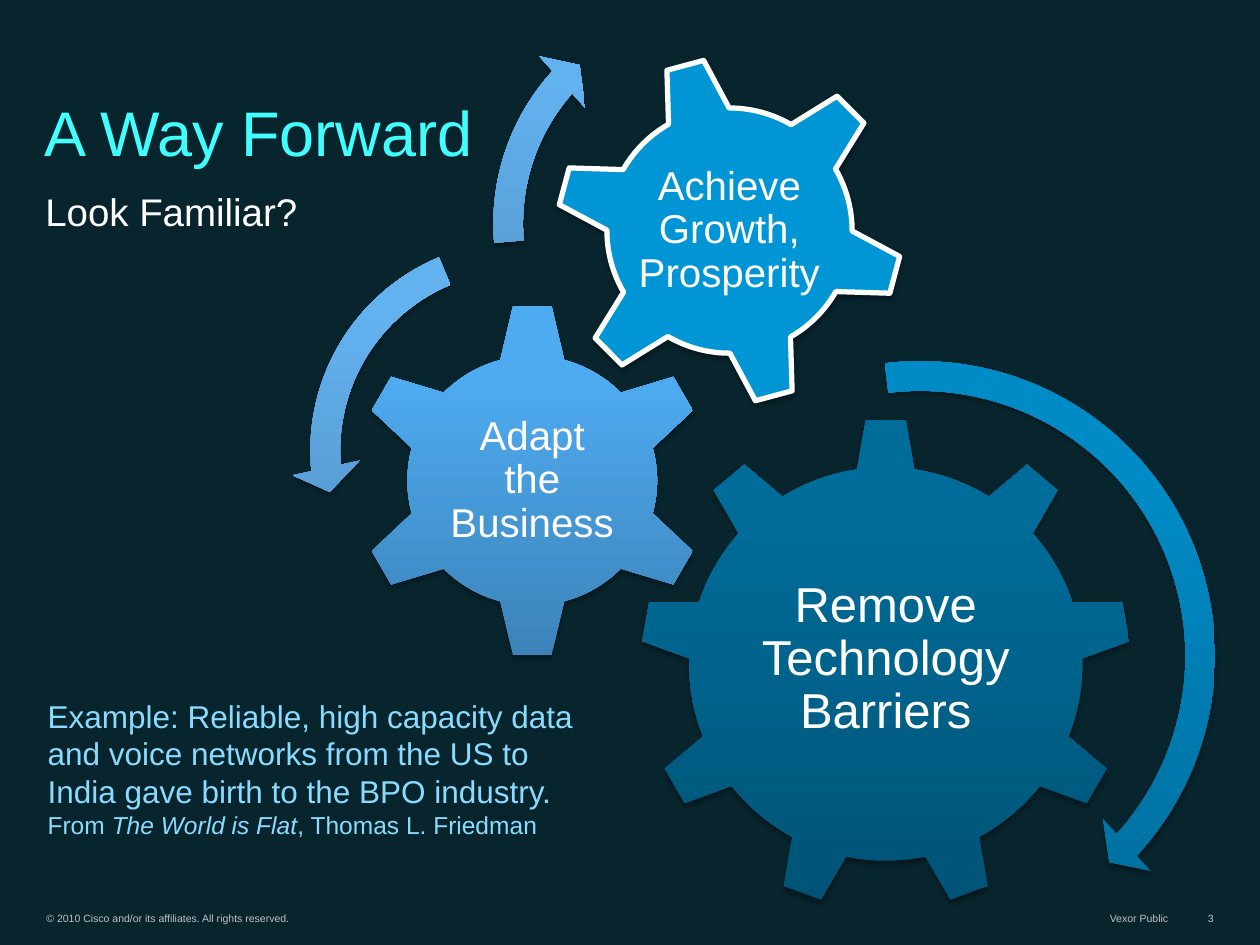
"""Build the "A Way Forward" slide: three meshing gears with turning arrows."""
from dataclasses import dataclass
from typing import Optional

from lxml.etree import SubElement
from pptx import Presentation
from pptx.dml.color import RGBColor
from pptx.enum.shapes import MSO_SHAPE as Preset
from pptx.enum.text import MSO_ANCHOR as Anchor, PP_ALIGN as Align
from pptx.oxml.ns import qn
from pptx.util import Inches, Pt

SLIDE_WIDTH, SLIDE_HEIGHT = Inches(10), Inches(7.5)


@dataclass(frozen=True)
class Theme:
    font: str = "Arial"
    background: str = "08252E"
    title: str = "40FFFE"
    white: str = "FFFFFF"
    example: str = "89DCFF"
    footer: str = "C0C0C0"
    shadow: str = "000000"
    deep_gear: tuple = ("005376", "006C99")
    light_gear: tuple = ("3C83B9", "4EABF0")
    bright_gear: tuple = ("0096D6",)
    deep_arrow: tuple = ("006B99", "008BC6")
    light_arrow: tuple = ("4C89B9", "63B2F0")
    title_size: int = 36
    subtitle_size: int = 22
    large_gear_size: int = 28
    small_gear_size: int = 23
    example_size: int = 18
    credit_size: int = 14
    footer_size: int = 6


THEME = Theme()


@dataclass(frozen=True)
class Area:
    """A rectangle in percent of the slide's width and height."""
    left: float
    top: float
    width: float
    height: float

    def emu(self) -> tuple:
        return (int(SLIDE_WIDTH * self.left / 100), int(SLIDE_HEIGHT * self.top / 100),
                int(SLIDE_WIDTH * self.width / 100), int(SLIDE_HEIGHT * self.height / 100))


@dataclass(frozen=True)
class Wheel:
    """A square by its centre, in percent of the slide, and its side, in percent of the width."""
    x: float
    y: float
    side: float

    def area(self, share: float = 1, lift: float = 0) -> Area:
        width = self.side * share
        height = width * SLIDE_WIDTH / SLIDE_HEIGHT
        return Area(self.x - width / 2, self.y - height / 2 - lift, width, height)


@dataclass(frozen=True)
class Gear:
    label: str
    preset: Preset
    wheel: Wheel
    colors: tuple
    size: int
    label_share: float
    label_lift: float = 0
    rotation: float = 0
    outline: Optional[str] = None


@dataclass(frozen=True)
class Turn:
    """A circular arrow; thickness and head in percent, angles in degrees."""
    preset: Preset
    wheel: Wheel
    colors: tuple
    thickness: float
    head_angle: float
    end: float
    start: float
    head: float


GEARS = (
    Gear("Remove Technology Barriers", Preset.GEAR_9, Wheel(70.3, 70.27, 39), THEME.deep_gear,
         THEME.large_gear_size, 0.6, label_lift=0.5),
    Gear("Adapt the Business", Preset.GEAR_6, Wheel(42.25, 50.87, 28.3), THEME.light_gear,
         THEME.small_gear_size, 0.5),
    Gear("Achieve Growth, Prosperity", Preset.GEAR_6, Wheel(57.9, 24.4, 27.8), THEME.bright_gear,
         THEME.small_gear_size, 0.56, rotation=345, outline=THEME.white),
)
TURNS = (
    Turn(Preset.CIRCULAR_ARROW, Wheel(73.05, 69.4, 49.9), THEME.deep_arrow,
         4.7, 4.98, 42.55, 263.07, 5.5),
    Turn(Preset.LEFT_CIRCULAR_ARROW, Wheel(41.25, 47.67, 36.3), THEME.light_arrow,
         6.5, 7.17, 174.82, 247.3, 7.5),
    Turn(Preset.CIRCULAR_ARROW, Wheel(57.15, 23.67, 39.1), THEME.light_arrow,
         6, 6.57, 221.9, 175.14, 7),
)
FOOTERS = (
    ("© 2010 Cisco and/or its affiliates. All rights reserved.", Area(2.7, 96, 37.4, 2.53), Align.LEFT),
    ("Vexor Public", Area(83.7, 96, 10, 2.53), Align.RIGHT),
    ("3", Area(94.5, 96, 2.8, 2.53), Align.RIGHT),
)


def style(font, size: float, color: str) -> None:
    """Apply the theme font with a size and a colour."""
    font.name, font.size = THEME.font, Pt(size)
    font.color.rgb = RGBColor.from_string(color)


def place(shape, area: Area) -> None:
    """Move a placeholder to an area."""
    shape.left, shape.top, shape.width, shape.height = area.emu()


def paint(shape, colors: tuple) -> None:
    """Fill with one colour, or with a gradient that rises from the bottom."""
    if len(colors) == 1:
        shape.fill.solid()
        shape.fill.fore_color.rgb = RGBColor.from_string(colors[0])
        return
    shape.fill.gradient()
    shape.fill.gradient_angle = 90
    for stop, color, position in zip(shape.fill.gradient_stops, colors, (0, 0.8)):
        stop.color.rgb = RGBColor.from_string(color)
        stop.position = position


def add_part(slide, preset: Preset, wheel: Wheel, colors: tuple, outline: Optional[str] = None):
    """Add a machine part with its fill, outline and soft shadow below."""
    part = slide.shapes.add_shape(preset, *wheel.area().emu())
    paint(part, colors)
    if outline:
        part.line.color.rgb = RGBColor.from_string(outline)
        part.line.width = Pt(3)
    else:
        part.line.fill.background()
    part.shadow.inherit = False
    effects = part.element.spPr.find(qn("a:effectLst"))
    shadow = SubElement(effects, qn("a:outerShdw"), blurRad=str(Pt(3.1)), dist=str(Pt(1.8)),
                        dir="5400000", rotWithShape="0")
    tint = SubElement(shadow, qn("a:srgbClr"), val=THEME.shadow)
    SubElement(tint, qn("a:alpha"), val="35000")
    return part


def add_text(slide, area: Area, text: str, size: float, color: str, align: Align = Align.LEFT,
             anchor: Anchor = Anchor.TOP):
    """Add a wrapping text box and return its frame."""
    frame = slide.shapes.add_textbox(*area.emu()).text_frame
    frame.word_wrap, frame.vertical_anchor = True, anchor
    frame.text = text
    frame.paragraphs[0].alignment = align
    style(frame.paragraphs[0].runs[0].font, size, color)
    return frame


def add_gear(slide, gear: Gear) -> None:
    """Add a gear and its upright label."""
    part = add_part(slide, gear.preset, gear.wheel, gear.colors, gear.outline)
    part.rotation = gear.rotation
    frame = add_text(slide, gear.wheel.area(gear.label_share, gear.label_lift), gear.label,
                     gear.size, THEME.white, Align.CENTER, Anchor.MIDDLE)
    frame.margin_left = frame.margin_right = frame.margin_top = frame.margin_bottom = Inches(0.03)
    frame.paragraphs[0].line_spacing = 0.9


def add_turn(slide, turn: Turn) -> None:
    """Add a circular arrow, turning degrees into adjustment units."""
    arrow = add_part(slide, turn.preset, turn.wheel, turn.colors)
    angles = [degrees * 0.6 for degrees in (turn.head_angle, turn.end, turn.start)]
    for index, value in enumerate((turn.thickness / 100, *angles, turn.head / 100)):
        arrow.adjustments[index] = value


def add_headings(slide) -> None:
    """Fill the title and body placeholders."""
    title, body = slide.shapes.title, slide.placeholders[1]
    place(title, Area(2.5, 6.27, 93.9, 12.27))
    place(body, Area(2.6, 19.6, 93.8, 72.4))
    title.text_frame.text, body.text_frame.text = "A Way Forward", "Look Familiar?"
    title.text_frame.vertical_anchor = Anchor.BOTTOM
    heading, question = title.text_frame.paragraphs[0], body.text_frame.paragraphs[0]
    heading.alignment, heading.line_spacing = Align.LEFT, 0.8
    question.line_spacing, question.space_before = 0.95, Pt(0)
    properties = question._p.get_or_add_pPr()
    properties.set("marL", "0")
    properties.set("indent", "0")
    SubElement(properties, qn("a:buNone"))
    style(heading.runs[0].font, THEME.title_size, THEME.title)
    style(question.runs[0].font, THEME.subtitle_size, THEME.white)


def add_example(slide) -> None:
    """Add the example and the credit of its book."""
    frame = add_text(slide, Area(2.8, 73.07, 45.7, 16.67),
                     "Example: Reliable, high capacity data and voice networks from the US to "
                     "India gave birth to the BPO industry.", THEME.example_size, THEME.example)
    credit = frame.add_paragraph()
    for words, italic in (("From ", False), ("The World is Flat", True), (", Thomas L. Friedman", False)):
        run = credit.add_run()
        run.text = words
        style(run.font, THEME.credit_size, THEME.example)
        run.font.italic = italic


def main() -> None:
    """Build and save the slide."""
    deck = Presentation()
    deck.slide_width, deck.slide_height = SLIDE_WIDTH, SLIDE_HEIGHT
    slide = deck.slides.add_slide(deck.slide_layouts[1])
    slide.background.fill.solid()
    slide.background.fill.fore_color.rgb = RGBColor.from_string(THEME.background)
    add_headings(slide)
    for gear in GEARS:
        add_gear(slide, gear)
    for turn in TURNS:
        add_turn(slide, turn)
    add_example(slide)
    for text, area, align in FOOTERS:
        add_text(slide, area, text, THEME.footer_size, THEME.footer, align, Anchor.BOTTOM)
    deck.save("out.pptx")


if __name__ == "__main__":
    main()
